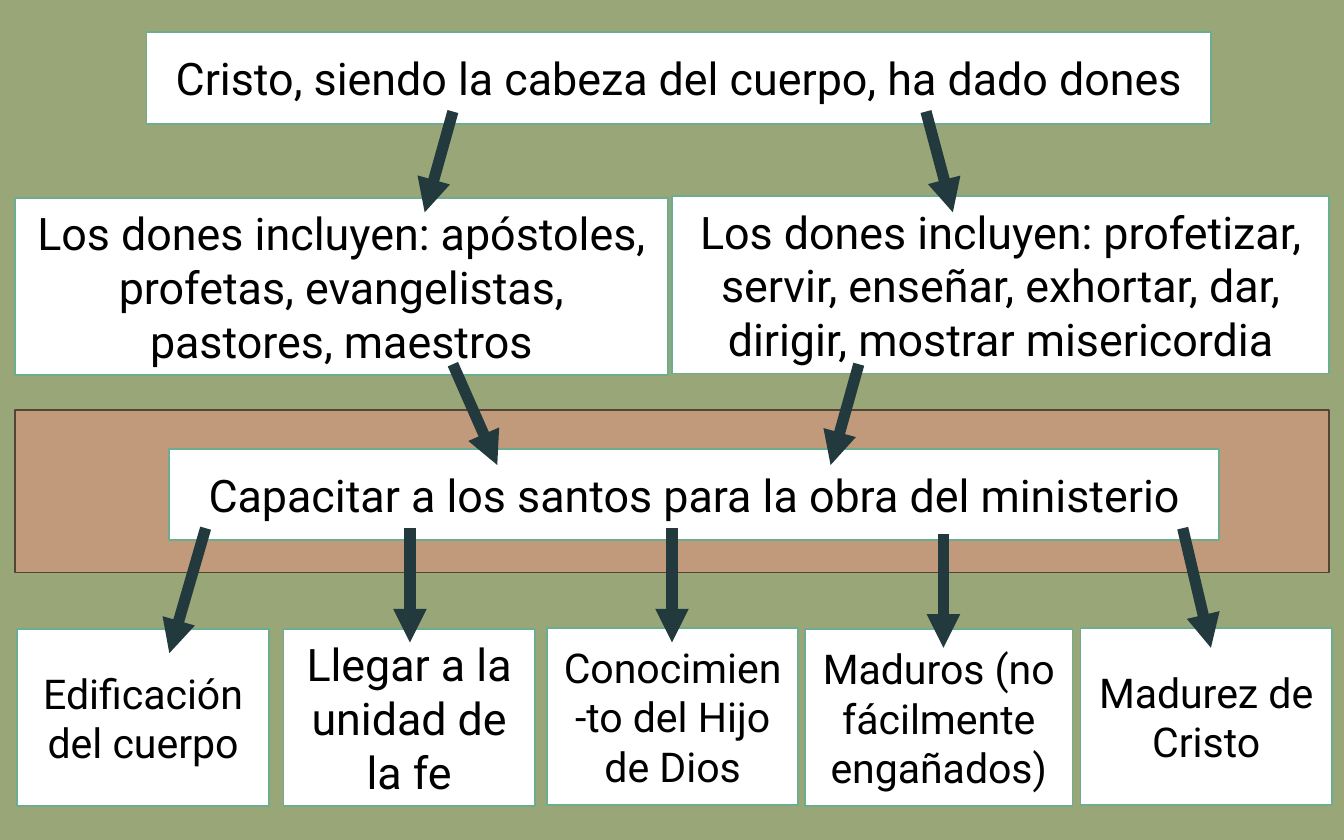
from lxml import etree
from pptx import Presentation
from pptx import util as u
from pptx.dml import color
from pptx.enum import shapes, text
from pptx.oxml import ns

WIDE, HIGH = 10, 6.25
COLS, ROWS = 100, 62.5
FONT = "Roboto"
WHITE, BLACK, GREEN = "FFFFFF", "000000", "6DAD8F"
SAGE, CLAY, BROWN, DARK = "99A677", "C19A7B", "554336", "223A3D"


def col(n):
    return u.Inches(WIDE * n / COLS)


def row(n):
    return u.Inches(HIGH * n / ROWS)


def paint(part, tone):
    part.solid()
    part.fore_color.rgb = color.RGBColor.from_string(tone)


def box(slide, x, y, w, h, fill=WHITE, edge=GREEN):
    item = slide.shapes.add_shape(
        shapes.MSO_SHAPE.RECTANGLE, col(x), row(y), col(w), row(h))
    item.shadow.inherit = False
    paint(item.fill, fill)
    paint(item.line.fill, edge)
    item.line.width = u.Pt(1)
    return item


def card(slide, words, x, y, w, h, size=24):
    frame = box(slide, x, y, w, h).text_frame
    frame.word_wrap = True
    frame.vertical_anchor = text.MSO_ANCHOR.MIDDLE
    para = frame.paragraphs[0]
    para.alignment = text.PP_ALIGN.CENTER
    run = para.add_run()
    run.text = words
    run.font.name = FONT
    run.font.size = u.Pt(size)
    paint(run.font.fill, BLACK)


def arrow(slide, x, y, run, drop):
    link = slide.shapes.add_connector(
        shapes.MSO_CONNECTOR.STRAIGHT,
        col(x), row(y), col(x + run), row(y + drop))
    paint(link.line.fill, DARK)
    link.line.width = u.Pt(6)
    edge = link.line.fill._xPr
    etree.SubElement(edge, ns.qn("a:tailEnd"), type="triangle")
    etree.SubElement(link._element.spPr, ns.qn("a:effectLst"))


def main():
    deck = Presentation()
    deck.slide_width, deck.slide_height = col(COLS), row(ROWS)
    slide = deck.slides.add_slide(deck.slide_layouts[6])
    paint(slide.background.fill, SAGE)

    box(slide, 1.1, 30.5, 97.8, 12.1, CLAY, BROWN)
    card(slide, "Cristo, siendo la cabeza del cuerpo, ha dado dones",
         10.9, 2.4, 79.2, 6.8)
    card(slide, "Los dones incluyen: apóstoles, profetas, evangelistas, "
         "pastores, maestros", 1.1, 14.7, 48.6, 13.2)
    card(slide, "Los dones incluyen: profetizar, servir, enseñar, exhortar, "
         "dar, dirigir, mostrar misericordia", 50, 14.6, 48.9, 13.2)
    card(slide, "Capacitar a los santos para la obra del ministerio",
         12.6, 33.4, 78.1, 6.8)

    goals = [
        ("Edificación del cuerpo", 1.3, 46.8, 18.7, 22),
        ("Llegar a la unidad de la fe", 21.1, 46.8, 18.7, 24),
        ("Conocimien-to del Hijo de Dios", 40.7, 46.7, 18.7, 22),
        ("Maduros (no fácilmente engañados)", 59.9, 46.8, 19.9, 22),
        ("Madurez de Cristo", 80.4, 46.7, 18.7, 22),
    ]
    for words, x, y, w, size in goals:
        card(slide, words, x, y, w, 13.2, size)

    steps = [
        (8.3, 7.5, [(33.7, -2.1), (68.9, 2)]),
        (27.1, 7.5, [(33.7, 3.3), (63.9, -2.1)]),
        (39.3, 9.3, [(15.3, -2.7)]),
        (39.3, 8.5, [(30.5, 0), (50, 0)]),
        (39.7, 8.5, [(70.2, 0)]),
        (39.3, 8.9, [(88, 2.1)]),
    ]
    for y, drop, links in steps:
        for x, run in links:
            arrow(slide, x, y, run, drop)

    deck.save("out.pptx")


if __name__ == "__main__":
    main()
